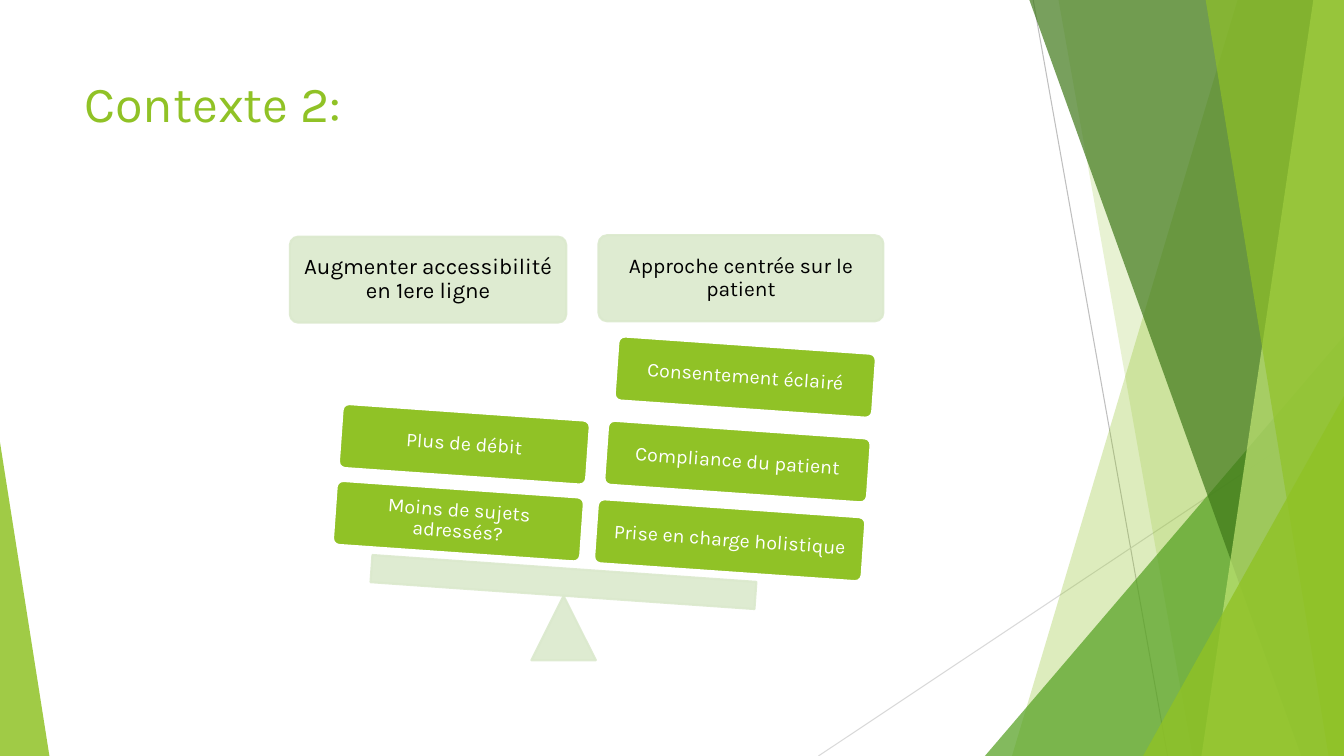
from pptx import Presentation
from pptx import util as u
from pptx.dml.color import RGBColor
from pptx.enum import shapes, text
from pptx.oxml.ns import qn
from lxml import etree

LIME = RGBColor(0x90, 0xC2, 0x26)
GREEN = RGBColor(0x54, 0xA0, 0x21)
FOREST = RGBColor(0x3F, 0x78, 0x19)
PALE = RGBColor(0xC0, 0xE4, 0x74)
SAGE = RGBColor(0xDB, 0xE9, 0xCD)
GREY = RGBColor(0xBF, 0xBF, 0xBF)
SILVER = RGBColor(0xD9, 0xD9, 0xD9)
WHITE = RGBColor(0xFF, 0xFF, 0xFF)
BLACK = RGBColor(0, 0, 0)

WIDTH, HEIGHT = 960, 540
TILT = 4
KIND = shapes.MSO_SHAPE


def fade(part, alpha):
    """Set the opacity, in percent, of every colour inside an XML part."""
    for color in part.iter(qn("a:srgbClr")):
        etree.SubElement(color, qn("a:alpha"), val=str(alpha * 1000))


class Canvas:
    font = "Karla"

    def __init__(self, slide):
        self.shapes = slide.shapes

    def paint(self, shape, fill, alpha=100, edge=None):
        shape.shadow.inherit = False
        shape.fill.solid()
        shape.fill.fore_color.rgb = fill
        if edge is None:
            shape.line.fill.background()
        else:
            shape.line.color.rgb = edge
            shape.line.width = u.Pt(1.5)
        if alpha < 100:
            fade(shape.element.spPr, alpha)

    def line(self, x1, y1, x2, y2, color):
        line = self.shapes.add_connector(
            shapes.MSO_CONNECTOR.STRAIGHT, *map(u.Pt, (x1, y1, x2, y2)))
        line.line.color.rgb = color
        line.line.width = u.Pt(0.75)
        etree.SubElement(line.element.spPr, qn("a:effectLst"))

    def facet(self, top, base, color, alpha):
        """Fill from a slanted left edge to the right side of the slide."""
        pen = self.shapes.build_freeform(u.Pt(top), u.Pt(-0.6))
        corners = (WIDTH, -0.6), (WIDTH, HEIGHT), (base, HEIGHT)
        pen.add_line_segments([(u.Pt(x), u.Pt(y)) for x, y in corners])
        self.paint(pen.convert_to_shape(), color, alpha)

    def shape(self, kind, box, color, alpha=100, edge=None, adjust=None, turn=0):
        shape = self.shapes.add_shape(kind, *map(u.Pt, box))
        if adjust is not None:
            shape.adjustments[0] = adjust
        shape.rotation = turn
        self.paint(shape, color, alpha, edge)
        return shape

    def label(self, shape, words, size, color):
        frame = shape.text_frame
        frame.word_wrap = True
        para = frame.paragraphs[0]
        para.text = words
        para.font.name = self.font
        para.font.size = u.Pt(size)
        para.font.color.rgb = color
        return frame, para

    def card(self, box, words, size, color, fill, edge, alpha=100, turn=0):
        card = self.shape(KIND.ROUNDED_RECTANGLE, box, fill, alpha, edge, 0.1, turn)
        frame, para = self.label(card, words, size, color)
        frame.vertical_anchor = text.MSO_ANCHOR.MIDDLE
        frame.margin_left = frame.margin_right = u.Pt(5)
        frame.margin_top = frame.margin_bottom = u.Pt(5)
        para.alignment = text.PP_ALIGN.CENTER
        para.line_spacing = 0.9

    def title(self, box, words):
        title = self.shapes.add_textbox(*map(u.Pt, box))
        self.label(title, words, 36, LIME)


def main():
    deck = Presentation()
    deck.slide_width, deck.slide_height = u.Pt(WIDTH), u.Pt(HEIGHT)
    canvas = Canvas(deck.slides.add_slide(deck.slide_layouts[6]))

    # Backdrop
    canvas.line(738, 0, 834, HEIGHT, GREY)
    canvas.line(WIDTH, 290, 584.6, HEIGHT, SILVER)
    canvas.facet(884.2, 722.9, LIME, 30)
    canvas.facet(756, 851.8, LIME, 20)
    canvas.shape(KIND.ISOSCELES_TRIANGLE, (703.5, 240, 256.5, 300), GREEN, 72, adjust=1)
    canvas.facet(735.1, 929.5, FOREST, 70)
    canvas.facet(938.2, 858.2, PALE, 70)
    canvas.facet(861.1, 949, LIME, 65)
    canvas.shape(KIND.ISOSCELES_TRIANGLE, (816.5, 283, 143.5, 257), LIME, 80, adjust=1)
    canvas.shape(KIND.ISOSCELES_TRIANGLE, (0, 316, 35.3, 224), LIME, 85, adjust=0)

    # Scale
    for box, words, size in (
        ((207, 169, 197.5, 61.5), "Augmenter accessibilité en 1ere ligne", 16),
        ((427.5, 168, 203.5, 61.5), "Approche centrée sur le patient", 15),
    ):
        canvas.card(box, words, size, BLACK, SAGE, SAGE, 90)
    canvas.shape(KIND.ISOSCELES_TRIANGLE, (379.6, 425.6, 46, 46), SAGE, 90, SAGE)
    canvas.shape(KIND.RECTANGLE, (265, 406, 275, 19.5), SAGE, 90, SAGE, turn=TILT)

    # Weights
    for left, top, width, words in (
        (425.5, 363, 191.5, "Prise en charge holistique"),
        (432.8, 306.8, 188, "Compliance du patient"),
        (440.2, 246.5, 184.3, "Consentement éclairé"),
        (239, 349.4, 177, "Moins de sujets adressés?"),
        (243.2, 294.5, 177, "Plus de débit"),
    ):
        canvas.card((left, top, width, 45.8), words, 14, WHITE, LIME, WHITE, turn=TILT)

    canvas.title((53.3, 48, 677, 104), "Contexte 2:")
    deck.save("out.pptx")


if __name__ == "__main__":
    main()
